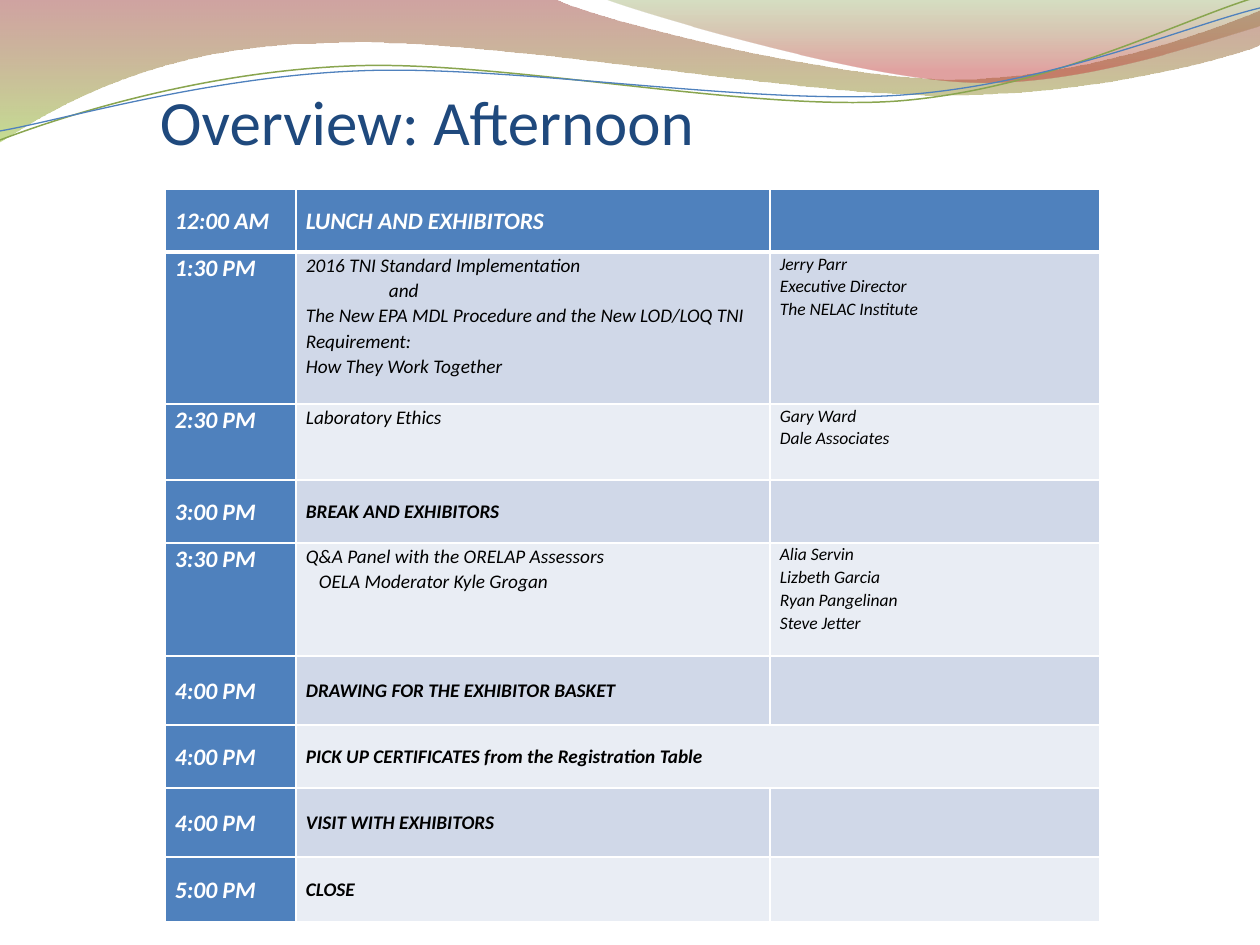
from dataclasses import dataclass

from lxml import etree
from pptx import Presentation
from pptx import util as u
from pptx.dml import color as dml
from pptx.enum import text
from pptx.oxml import ns

SCALE = 914400 / 126
FONT = "Calibri"
BLUE, WHITE, BLACK = "4F81BD", "FFFFFF", "000000"
BANDS = ("E9EDF4", "D0D8E8")
COLS = (131, 474, 330)
SIZES = (13.5, 11, 10)


@dataclass
class Stop:
    pos: float
    hue: str
    alpha: int


@dataclass
class Wave:
    start: tuple
    steps: list
    stops: tuple = ()
    hue: str = ""
    width: float = 0


@dataclass
class Line:
    words: str
    pad: int = 0


@dataclass
class Row:
    time: str
    high: int
    topic: list
    who: tuple = ()
    strong: bool = True
    span: bool = False


WAVES = [
    Wave((0, 0), [(554, -1), (600, 21, 837, 79, 955, 79),
                  (1074, 79, 1207, 33, 1260, 11), (1261, 45),
                  (1239, 55, 1096, 96, 940, 95), (783, 95, 481, 35, 324, 43),
                  (161, 45, 58, 105, -1, 142)],
         stops=(Stop(0, "973330", 45), Stop(1, "95C238", 55))),
    Wave((604, -1), [(642, 14, 859, 78, 969, 82),
                     (1079, 87, 1211, 40, 1260, 26), (1260, 0)],
         stops=(Stop(0, "769537", 30), Stop(0.8, "BE3330", 45))),
    Wave((0, 140), [(60, 117, 199, 72, 349, 66), (498, 59, 747, 112, 898, 101),
                    (1050, 89, 1182, 19, 1257, -3)], hue="89A54F", width=0.85),
    Wave((0, 131), [(59, 121, 207, 77, 357, 71), (508, 64, 752, 106, 903, 95),
                    (1053, 84, 1186, 26, 1260, 8)], hue=BLUE, width=0.75),
]

ROWS = [
    Row("12:00 AM", 63, [Line("LUNCH AND EXHIBITORS")]),
    Row("1:30 PM", 152, [
        Line("2016 TNI Standard Implementation"),
        Line("and", 83),
        Line("The New EPA MDL Procedure and the New LOD/LOQ TNI Requirement:"),
        Line("How They Work Together"),
    ], ("Jerry Parr", "Executive Director", "The NELAC Institute"), False),
    Row("2:30 PM", 76, [Line("Laboratory Ethics")],
        ("Gary Ward", "Dale Associates"), False),
    Row("3:00 PM", 63, [Line("BREAK AND EXHIBITORS")]),
    Row("3:30 PM", 113, [
        Line("Q&A Panel with the ORELAP Assessors"),
        Line("OELA Moderator Kyle Grogan", 13),
    ], ("Alia Servin", "Lizbeth Garcia", "Ryan Pangelinan", "Steve Jetter"), False),
    Row("4:00 PM", 69, [Line("DRAWING FOR THE EXHIBITOR BASKET")]),
    Row("4:00 PM", 63, [Line("PICK UP CERTIFICATES from the Registration Table")],
        span=True),
    Row("4:00 PM", 69, [Line("VISIT WITH EXHIBITORS")]),
    Row("5:00 PM", 65, [Line("CLOSE")]),
]


def px(n: float) -> int:
    return round(n * SCALE)


def rgb(hue: str) -> dml.RGBColor:
    return dml.RGBColor.from_string(hue)


def put(item, **values) -> None:
    for key, value in values.items():
        setattr(item, key, value)


def bend(shape, steps: list) -> None:
    nodes = iter(list(shape.element.iter(ns.qn("a:lnTo"))))
    for step in steps:
        group = [next(nodes) for _ in range(len(step) // 2)]
        if len(group) == 3:
            curve = etree.Element(ns.qn("a:cubicBezTo"))
            group[0].addprevious(curve)
            for node in group:
                curve.append(node[0])
                node.getparent().remove(node)


def draw_wave(slide, wave: Wave) -> None:
    points = [step[i:i + 2] for step in wave.steps for i in range(0, len(step), 2)]
    pen = slide.shapes.build_freeform(*wave.start, scale=SCALE)
    pen.add_line_segments(points, close=bool(wave.stops))
    shape = pen.convert_to_shape()
    bend(shape, wave.steps)
    shape.shadow.inherit = False
    if not wave.stops:
        shape.fill.background()
        shape.line.color.rgb = rgb(wave.hue)
        shape.line.width = u.Pt(wave.width)
        return
    shape.line.fill.background()
    shape.fill.gradient()
    shape.fill.gradient_angle = 270
    for mark, stop in zip(shape.fill.gradient_stops, wave.stops):
        mark.position = stop.pos
        mark.color.rgb = rgb(stop.hue)
    for node, stop in zip(shape.element.iter(ns.qn("a:srgbClr")), wave.stops):
        etree.SubElement(node, ns.qn("a:alpha"), val=str(stop.alpha * 1000))


def edge(cell, row: int) -> None:
    props = cell._tc.get_or_add_tcPr()
    for side in "LRTB":
        thick = (row, side) in ((0, "B"), (1, "T"))
        line = etree.SubElement(props, ns.qn(f"a:ln{side}"),
                                w=str(u.Pt(3 if thick else 1)))
        fill = etree.SubElement(line, ns.qn("a:solidFill"))
        etree.SubElement(fill, ns.qn("a:srgbClr"), val=WHITE)


def fill_cell(cell, lines: list, mid: bool, hue: str, style: dict) -> None:
    put(cell, margin_left=px(10), margin_right=px(9), margin_top=0, margin_bottom=0,
        vertical_anchor=text.MSO_ANCHOR.MIDDLE if mid else text.MSO_ANCHOR.TOP)
    frame = cell.text_frame
    for i, line in enumerate(lines):
        para = frame.add_paragraph() if i else frame.paragraphs[0]
        para.line_spacing = 1.07
        if line.pad:
            para._p.get_or_add_pPr().set("marL", str(px(line.pad)))
        run = para.add_run()
        run.text = line.words
        put(run.font, name=FONT, italic=True, **style)
        run.font.color.rgb = rgb(hue)


def draw_table(slide) -> None:
    high = sum(row.high for row in ROWS)
    grid = slide.shapes.add_table(len(ROWS), len(COLS), px(165), px(189),
                                  px(sum(COLS)), px(high)).table
    grid.horz_banding = False
    for col, wide in zip(grid.columns, COLS):
        col.width = px(wide)
    for r, row in enumerate(ROWS):
        grid.rows[r].height = px(row.high)
        texts = ([Line(row.time)], row.topic, [Line(name) for name in row.who])
        for c, lines in enumerate(texts):
            cell = grid.cell(r, c)
            dark = r == 0 or c == 0
            edge(cell, r)
            cell.fill.solid()
            cell.fill.fore_color.rgb = rgb(BLUE if dark else BANDS[r % 2])
            style = {"size": u.Pt(SIZES[0] if dark else SIZES[c]),
                     "bold": c == 0 or row.strong}
            fill_cell(cell, lines, row.strong, WHITE if dark else BLACK, style)
        if row.span:
            grid.cell(r, 1).merge(grid.cell(r, 2))


def draw_title(slide) -> None:
    title = slide.shapes.title
    put(title, left=px(160), top=px(95), width=px(1050), height=px(63))
    frame = title.text_frame
    put(frame, margin_left=0, margin_right=0, margin_top=px(6), margin_bottom=0,
        word_wrap=True, auto_size=text.MSO_AUTO_SIZE.NONE,
        vertical_anchor=text.MSO_ANCHOR.BOTTOM)
    frame.text = "Overview: Afternoon"
    para = frame.paragraphs[0]
    para.alignment = text.PP_ALIGN.LEFT
    put(para.runs[0].font, name=FONT, size=u.Pt(36))
    para.runs[0].font.color.rgb = rgb("1F497D")


def main() -> None:
    deck = Presentation()
    put(deck, slide_width=px(1260), slide_height=px(945))
    slide = deck.slides.add_slide(deck.slide_layouts[5])
    for wave in WAVES:
        draw_wave(slide, wave)
    draw_title(slide)
    draw_table(slide)
    deck.save("out.pptx")


if __name__ == "__main__":
    main()
